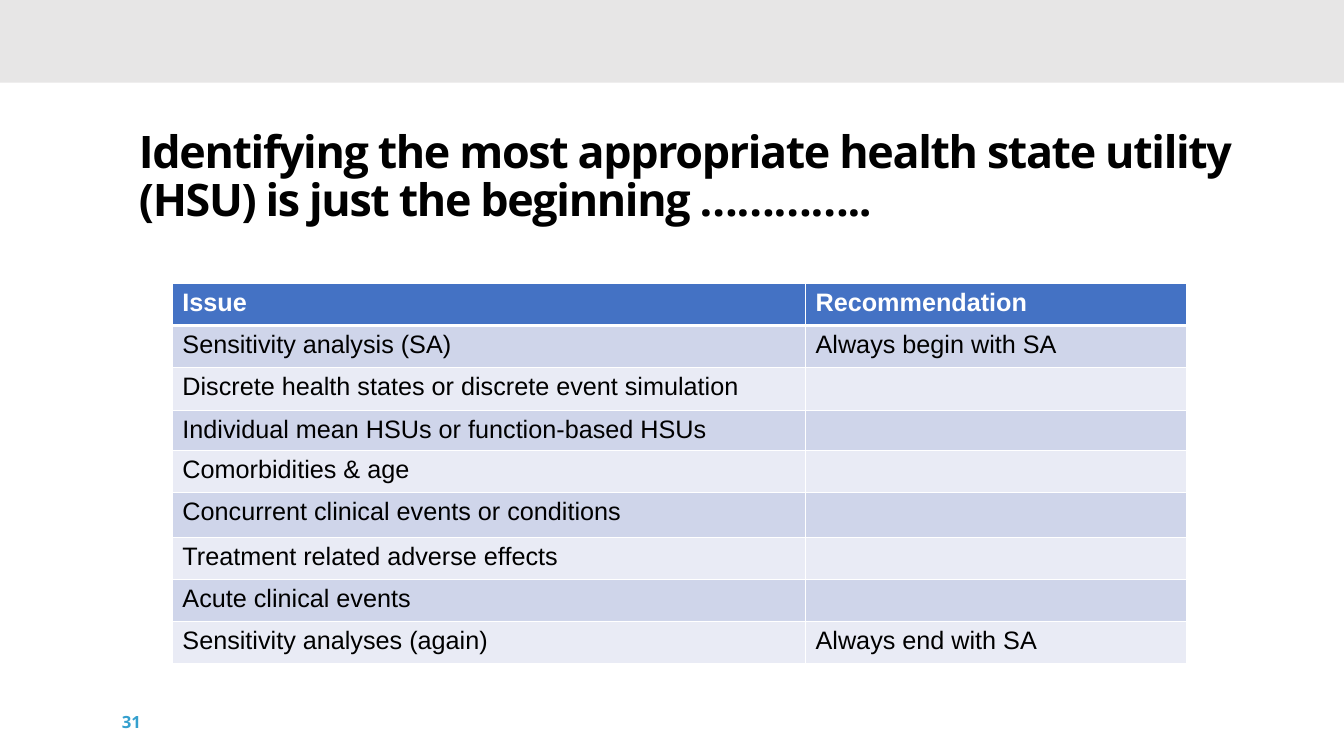
from lxml.etree import SubElement
from pptx import Presentation
from pptx.dml.color import RGBColor
from pptx.enum.shapes import MSO_SHAPE
from pptx.enum.text import MSO_ANCHOR
from pptx.oxml.ns import qn
from pptx.util import Inches, Pt

BLACK = RGBColor(0x00, 0x00, 0x00)
WHITE = RGBColor(0xFF, 0xFF, 0xFF)
BAND_GREY = RGBColor(0xE7, 0xE6, 0xE6)
NUMBER_BLUE = RGBColor(0x35, 0xA0, 0xCE)
HEADER_BLUE = RGBColor(0x44, 0x72, 0xC4)
ROW_FILLS = [RGBColor(0xE9, 0xEB, 0xF5), RGBColor(0xCF, 0xD5, 0xEA)]

TITLE = {"name": "Open Sans", "size": Pt(32), "bold": True, "color": BLACK}
NUMBER = {"name": "Open Sans", "size": Pt(12), "bold": True, "color": NUMBER_BLUE}
HEADER = {"name": "Arial", "size": Pt(18), "bold": True, "color": WHITE}
BODY = {"name": "Arial", "size": Pt(18), "bold": False, "color": BLACK}

COLUMN_WIDTHS = [6.28, 3.78]
ROWS = [
    (0.42, "Issue", "Recommendation"),
    (0.42, "Sensitivity analysis (SA)", "Always begin with SA"),
    (0.42, "Discrete health states or discrete event simulation", ""),
    (0.38, "Individual mean HSUs or function-based HSUs", ""),
    (0.42, "Comorbidities & age", ""),
    (0.44, "Concurrent clinical events or conditions", ""),
    (0.42, "Treatment related adverse effects", ""),
    (0.42, "Acute clinical events", ""),
    (0.42, "Sensitivity analyses (again)", "Always end with SA"),
]


def format_font(font, values):
    for key, value in values.items():
        if key == "color":
            font.color.rgb = value
        else:
            setattr(font, key, value)


def add_run(tf, text, values):
    p = tf.paragraphs[0]
    r = p.add_run()
    r.text = text
    format_font(r.font, values)
    return p, r


def add_text(s, box, text, values):
    tf = s.shapes.add_textbox(*map(Inches, box)).text_frame
    tf.word_wrap = True
    p, r = add_run(tf, text, values)
    return tf, p, r


def add_top_band(s, box):
    sp = s.shapes.add_shape(MSO_SHAPE.RECTANGLE, *map(Inches, box))
    sp.shadow.inherit = False
    sp.fill.solid()
    sp.fill.fore_color.rgb = BAND_GREY
    sp.line.fill.background()


def add_title(s, box, text):
    tf, p, r = add_text(s, box, text, TITLE)
    p.line_spacing = Pt(34)
    r.font._element.set("spc", "-100")


def add_slide_number(s, box, text):
    tf, p, r = add_text(s, box, text, NUMBER)
    tf.vertical_anchor = MSO_ANCHOR.MIDDLE


def add_borders(cell, widths):
    """Draw white cell edges; widths maps an edge tag to points."""
    tc_pr = cell._tc.get_or_add_tcPr()
    for edge, width in widths.items():
        ln = SubElement(tc_pr, qn("a:" + edge), w=str(Pt(width)))
        fill = SubElement(ln, qn("a:solidFill"))
        SubElement(fill, qn("a:srgbClr"), val=str(WHITE))


def add_issue_table(s, left, top):
    width, height = sum(COLUMN_WIDTHS), sum(row[0] for row in ROWS)
    box = map(Inches, (left, top, width, height))
    table = s.shapes.add_table(len(ROWS), len(COLUMN_WIDTHS), *box).table
    for column, column_width in zip(table.columns, COLUMN_WIDTHS):
        column.width = Inches(column_width)
    for i, (row_height, *texts) in enumerate(ROWS):
        table.rows[i].height = Inches(row_height)
        for j, text in enumerate(texts):
            cell = table.cell(i, j)
            add_borders(cell, {"lnL": 1, "lnR": 1,
                               "lnT": 3 if i == 1 else 1,
                               "lnB": 3 if i == 0 else 1})
            cell.fill.solid()
            cell.fill.fore_color.rgb = ROW_FILLS[i % 2] if i else HEADER_BLUE
            if text:
                add_run(cell.text_frame, text, BODY if i else HEADER)


def main():
    prs = Presentation()
    prs.slide_width, prs.slide_height = Inches(13.33), Inches(7.5)
    s = prs.slides.add_slide(prs.slide_layouts[6])
    add_top_band(s, (0, 0, 13.33, 0.82))
    add_slide_number(s, (1.11, 6.96, 1.08, 0.4), "31")
    add_title(s, (1.28, 1.24, 11.45, 1.19),
              "Identifying the most appropriate health state utility (HSU) "
              "is just the beginning …………..")
    add_issue_table(s, 1.71, 2.81)
    prs.save("out.pptx")


if __name__ == "__main__":
    main()
